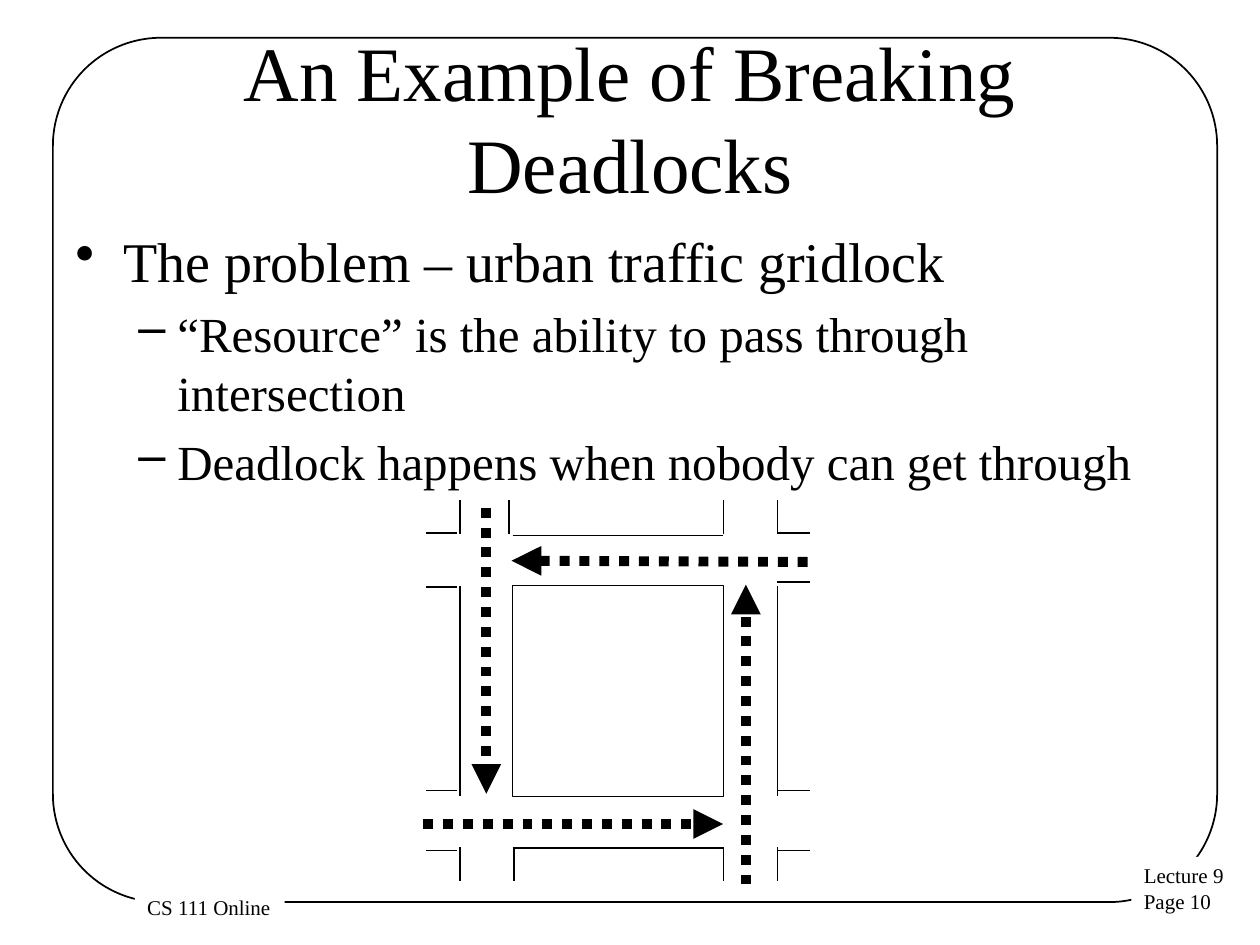
from pptx import Presentation
from pptx.dml.color import RGBColor
from pptx.enum.dml import MSO_LINE
from pptx.enum.shapes import MSO_CONNECTOR, MSO_SHAPE
from pptx.enum.text import MSO_ANCHOR, MSO_AUTO_SIZE, PP_ALIGN
from pptx.oxml.ns import qn
from pptx.util import Inches, Pt
from lxml import etree

RECTANGLE, ROUNDED = MSO_SHAPE.RECTANGLE, MSO_SHAPE.ROUNDED_RECTANGLE
STRAIGHT = MSO_CONNECTOR.STRAIGHT
DOTTED = MSO_LINE.ROUND_DOT
MIDDLE, TOP = MSO_ANCHOR.MIDDLE, MSO_ANCHOR.TOP
LEFT, CENTER = PP_ALIGN.LEFT, PP_ALIGN.CENTER
GROW, FIXED = MSO_AUTO_SIZE.SHAPE_TO_FIT_TEXT, MSO_AUTO_SIZE.NONE

COLORS = {"ink": "000000", "paper": "FFFFFF"}
FONT = "Times New Roman"
COLUMNS, ROWS = 100, 75
SLIDE_WIDTH, SLIDE_HEIGHT = Inches(10), Inches(7.5)

# Curbs of the street grid, in columns and rows
CURB_COLUMNS = (36.5, 40.7, 57.4, 61.7)
BLOCK_TOP, BLOCK_BOTTOM = 46.5, 63.2

BULLETS = [
    ("•", 0, 32, "The problem – urban traffic gridlock"),
    ("–", 1, 28, "“Resource” is the ability to pass through intersection"),
    ("–", 1, 28, "Deadlock happens when nobody can get through"),
]
INDENTS = [(0.38, -0.38), (0.81, -0.31)]


def color(name):
    return RGBColor.from_string(COLORS[name])


def grid(*lengths):
    """Turn alternating columns and rows into slide lengths."""
    units = (SLIDE_WIDTH / COLUMNS, SLIDE_HEIGHT / ROWS)
    return [round(length * units[index % 2]) for index, length in enumerate(lengths)]


def add_outline(slide, kind, place, width):
    shape = slide.shapes.add_shape(kind, *grid(*place))
    shape.shadow.inherit = False
    shape.fill.background()
    shape.line.color.rgb = color("ink")
    shape.line.width = Pt(width)
    return shape


def add_line(slide, start, end, width=0.75):
    line = slide.shapes.add_connector(STRAIGHT, *grid(*start, *end))
    line.line.color.rgb = color("ink")
    line.line.width = Pt(width)
    etree.SubElement(line._element.spPr, qn("a:effectLst"))
    return line


def add_traffic_arrow(slide, start, end):
    arrow = add_line(slide, start, end, width=5.67)
    arrow.line.dash_style = DOTTED
    etree.SubElement(arrow.line._get_or_add_ln(), qn("a:tailEnd"), type="triangle")


def add_text(slide, place, lines, size, alignment=LEFT, **frame_format):
    box = slide.shapes.add_textbox(*grid(*place))
    frame = box.text_frame
    settings = {"word_wrap": True, "auto_size": FIXED, "vertical_anchor": TOP}
    for name, value in {**settings, **frame_format}.items():
        setattr(frame, name, value)
    frame.text = "\n".join(lines)
    for paragraph in frame.paragraphs:
        paragraph.alignment = alignment
        for name, value in {"name": FONT, "size": Pt(size)}.items():
            setattr(paragraph.font, name, value)
        paragraph.font.color.rgb = color("ink")
    return box


def add_corner_label(slide, place, lines):
    label = add_text(slide, place, lines, 12, word_wrap=False, auto_size=GROW)
    label.fill.solid()
    label.fill.fore_color.rgb = color("paper")


def add_bullets(slide, place):
    box = add_text(slide, place, [text for *_, text in BULLETS], 28)
    for paragraph, (bullet, level, size, _) in zip(box.text_frame.paragraphs, BULLETS):
        values = {"level": level, "space_before": Pt(0.2 * size)}
        for name, value in values.items():
            setattr(paragraph, name, value)
        paragraph.font.size = Pt(size)
        properties = paragraph._p.get_or_add_pPr()
        for name, inches in zip(("marL", "indent"), INDENTS[level]):
            properties.set(name, str(Inches(inches)))
        mark = etree.Element(qn("a:buChar"), char=bullet)
        properties.find(qn("a:defRPr")).addprevious(mark)


def add_streets(slide):
    far_left, left, right, far_right = CURB_COLUMNS
    add_outline(slide, RECTANGLE,
                (left, BLOCK_TOP, right - left, BLOCK_BOTTOM - BLOCK_TOP), 0.75)
    for row in (42.5, 67.3):
        add_line(slide, (left, row), (right, row))
    for column in (far_left, far_right):
        add_line(slide, (column, BLOCK_TOP), (column, BLOCK_BOTTOM))

    for top, bottom, inner_left in ((39.7, 42.4, 40.4), (67.2, 69.9, 40.8)):
        for column in (far_left, inner_left, right, far_right):
            add_line(slide, (column, bottom), (column, top))
    for start, end, upper_curb in ((33.8, 36.3, 46.6), (61.7, 64.3, 46.2)):
        for row in (42.3, upper_curb, 62.75, 67.5):
            add_line(slide, (start, row), (end, row))


def add_traffic(slide):
    routes = [
        ((64.1, 44.6), (40.6, 44.5)),
        ((38.6, 40.3), (38.6, 63)),
        ((33.6, 65.4), (57.4, 65.4)),
        ((59.2, 70.2), (59.2, 46.4)),
    ]
    for start, end in routes:
        add_traffic_arrow(slide, start, end)


def main():
    presentation = Presentation()
    presentation.slide_width, presentation.slide_height = SLIDE_WIDTH, SLIDE_HEIGHT
    slide = presentation.slides.add_slide(presentation.slide_layouts[6])

    border = add_outline(slide, ROUNDED, (4.2, 3, 92.4, 68.6), 1)
    border.adjustments[0] = 0.125
    add_corner_label(slide, (89.8, 68, 8.4, 5.1), ["Lecture 9", "Page 10"])
    add_corner_label(slide, (10.7, 70.5, 11.9, 3), ["CS 111 Online"])
    add_text(slide, (5, 3, 90, 12.5), ["An Example of Breaking Deadlocks"], 44,
             alignment=CENTER, vertical_anchor=MIDDLE)
    add_bullets(slide, (5, 17.5, 90, 49.5))
    add_streets(slide)
    add_traffic(slide)
    presentation.save("out.pptx")


if __name__ == "__main__":
    main()
